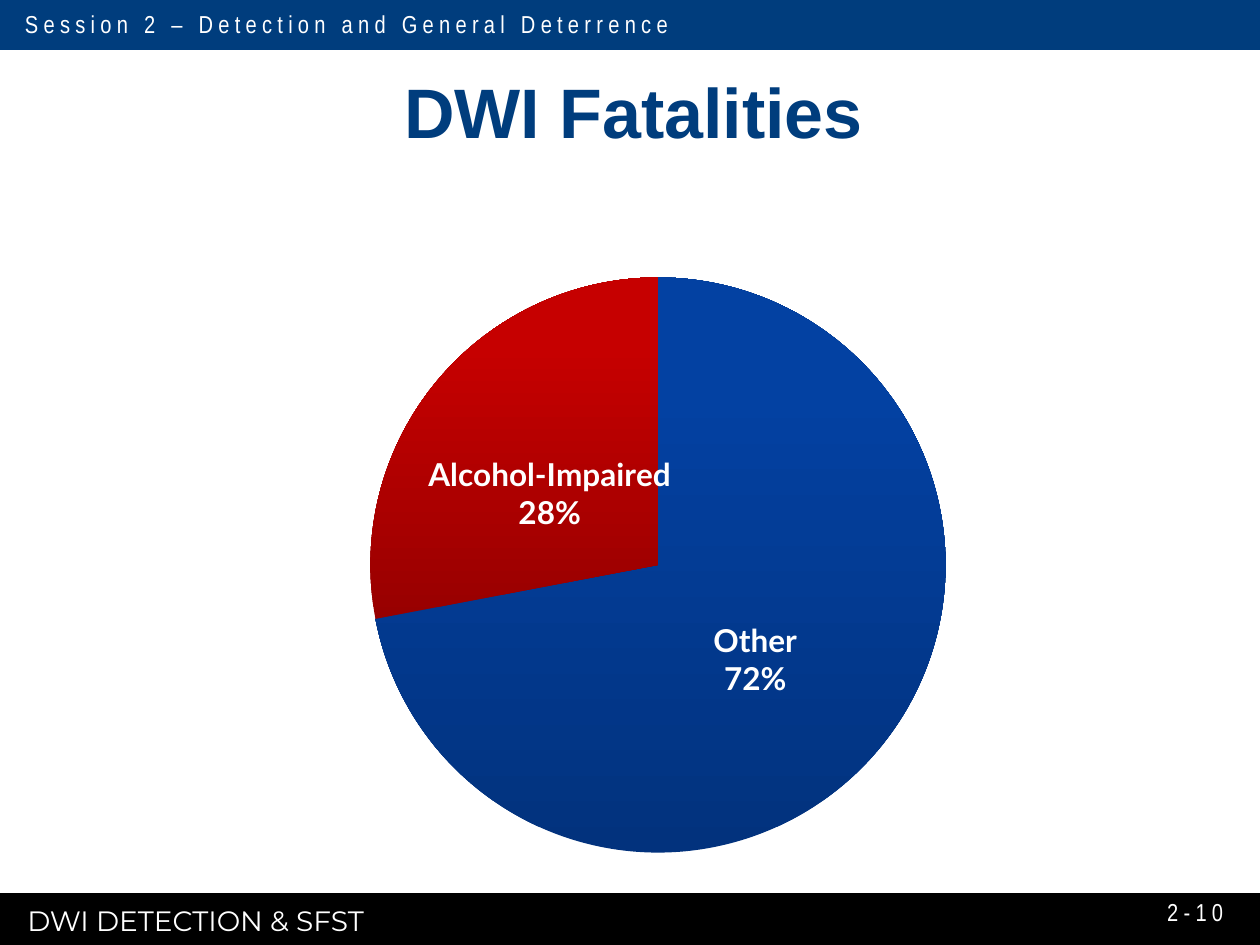
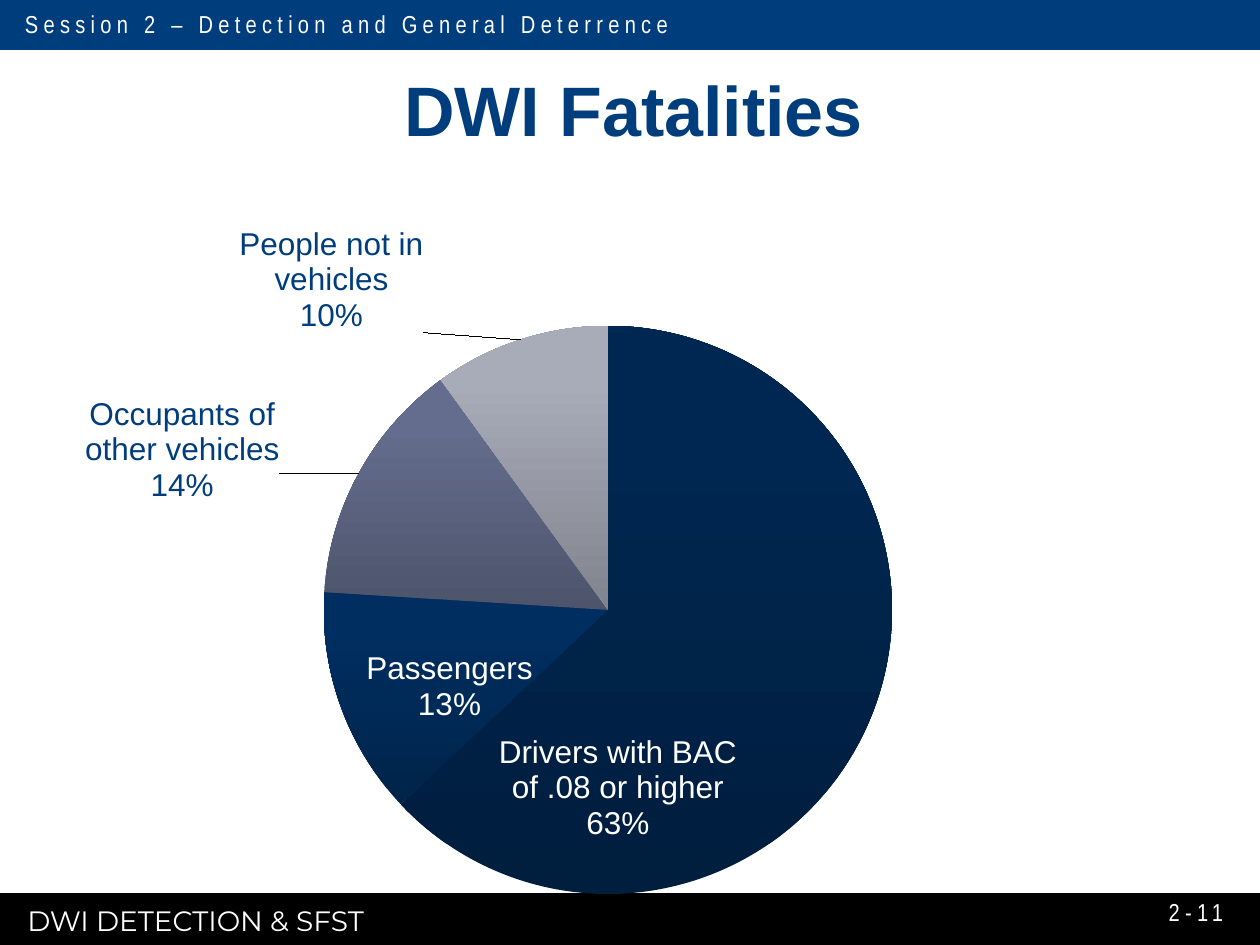
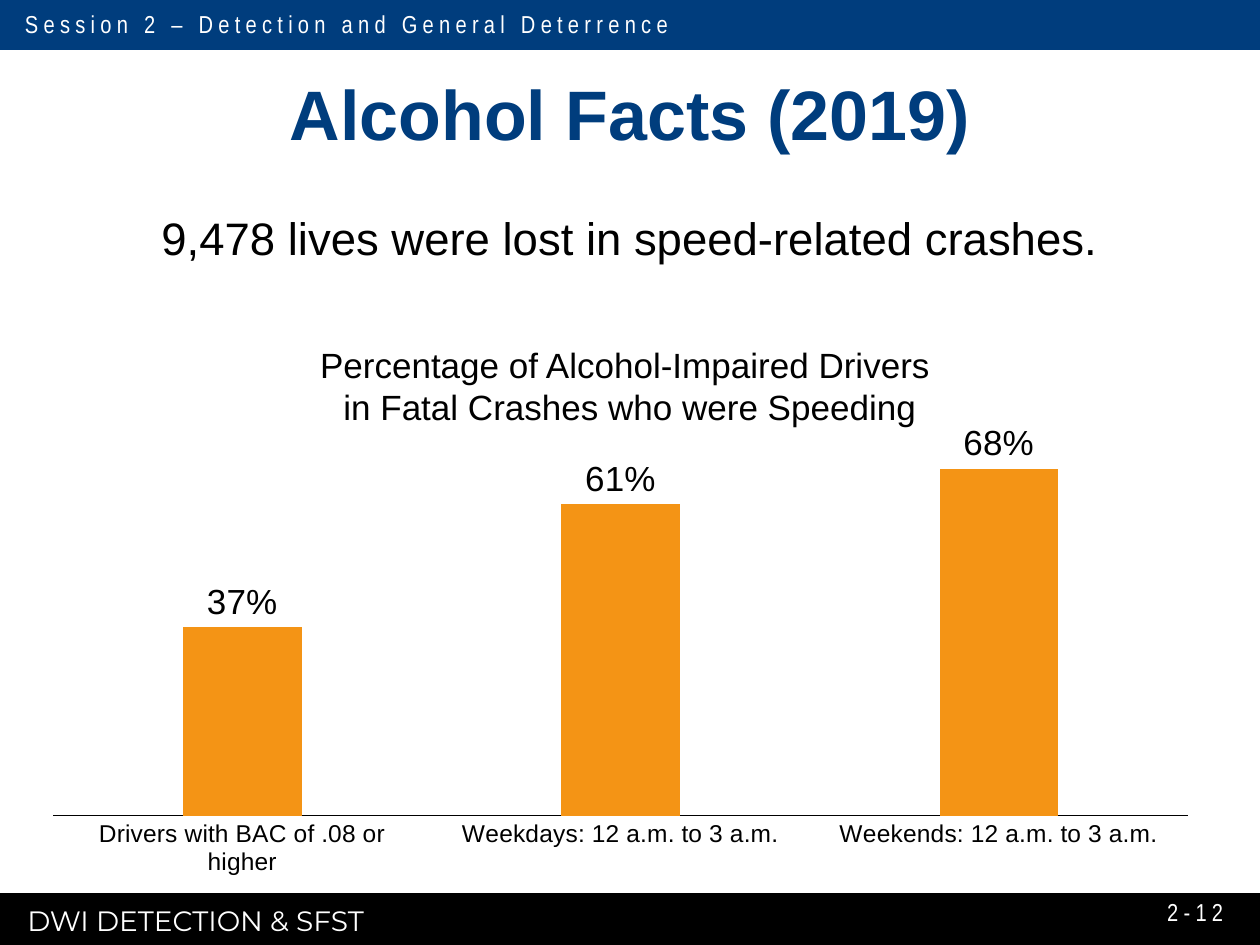
"""Build three slides on DWI fatalities and alcohol-related crash facts."""
from pptx import Presentation
from pptx.chart.data import CategoryChartData
from pptx.dml.color import RGBColor
from pptx.enum.chart import XL_CHART_TYPE as CT, XL_LABEL_POSITION as LP, XL_TICK_MARK as TM
from pptx.enum.shapes import MSO_SHAPE as SHAPE
from pptx.enum.text import MSO_ANCHOR as ANCHOR, PP_ALIGN as ALIGN
from pptx.oxml import parse_xml
from pptx.oxml.ns import nsdecls
from pptx.util import Pt

NAVY = RGBColor(0x00, 0x3D, 0x7D)
BLACK = RGBColor(0x00, 0x00, 0x00)
WHITE = RGBColor(0xFF, 0xFF, 0xFF)
ORANGE = RGBColor(0xF4, 0x94, 0x15)

HEADER = dict(name="Arial Narrow", size=Pt(14), color=WHITE)
FOOTER = dict(name="Montserrat", size=Pt(16), color=WHITE)
TITLE = dict(name="Arial", size=Pt(40), bold=True, color=NAVY)
BODY = dict(name="Arial", size=Pt(26), color=BLACK)
CAPTION = dict(name="Arial", size=Pt(20), color=BLACK)
AXIS = dict(name="Arial", size=Pt(14), color=BLACK)

LABEL_XML = """<c:dLbl %s><c:idx val="%d"/>
<c:layout><c:manualLayout><c:x val="%s"/><c:y val="%s"/></c:manualLayout></c:layout>
<c:showLegendKey val="0"/><c:showVal val="0"/><c:showCatName val="1"/><c:showSerName val="0"/>
<c:showPercent val="1"/><c:showBubbleSize val="0"/><c:separator>\n</c:separator>
<c:extLst><c:ext uri="{CE6537A1-D6FC-4f65-9D91-7224C49458BB}"
xmlns:c15="http://schemas.microsoft.com/office/drawing/2012/chart">
<c15:layout><c:manualLayout><c:w val="%s"/><c:h val="%s"/></c:manualLayout></c15:layout>
</c:ext></c:extLst></c:dLbl>"""
PLOT_XML = """<c:layout %s><c:manualLayout><c:layoutTarget val="inner"/>
<c:xMode val="edge"/><c:yMode val="edge"/><c:x val="%s"/><c:y val="%s"/>
<c:w val="%s"/><c:h val="%s"/></c:manualLayout></c:layout>"""


def style(font, values):
    for key, value in values.items():
        if key == "color":
            font.color.rgb = value
        else:
            setattr(font, key, value)


def add_text(s, box, lines, values, align=ALIGN.LEFT, anchor=ANCHOR.MIDDLE, inset=None, spacing=0):
    tf = s.shapes.add_textbox(*map(Pt, box)).text_frame
    tf.word_wrap = True
    tf.vertical_anchor = anchor
    if inset is not None:
        tf.margin_left = tf.margin_right = tf.margin_top = tf.margin_bottom = Pt(inset)
    for i, line in enumerate(lines):
        p = tf.add_paragraph() if i else tf.paragraphs[0]
        p.alignment = align
        r = p.add_run()
        r.text = line
        style(r.font, values)
        if spacing:
            r._r.get_or_add_rPr().set("spc", str(spacing))


prs = Presentation()
prs.slide_width, prs.slide_height = Pt(720), Pt(540)

slides = []
titles = [
    ("DWI Fatalities", (38, 37.1, 648, 52.6)),
    ("DWI Fatalities", (38, 32.2, 648, 59.8)),
    ("Alcohol Facts (2019)", (24, 34.3, 672, 59.8)),
]
for number, (title, box) in enumerate(titles, 10):
    s = prs.slides.add_slide(prs.slide_layouts[5])
    slides.append(s)
    for top, height, color in ((511.2, 28.8, BLACK), (0, 27.6, NAVY)):
        sp = s.shapes.add_shape(SHAPE.RECTANGLE, 0, Pt(top), Pt(720), Pt(height))
        sp.shadow.inherit = False
        sp.fill.solid()
        sp.fill.fore_color.rgb = sp.line.color.rgb = color
        sp.line.width = Pt(2)
    add_text(s, (7.2, 1.3, 620, 24.2), ["Session 2 – Detection and General Deterrence"], HEADER, spacing=300)
    add_text(s, (8.6, 512.8, 501, 26.6), ["DWI DETECTION & SFST"], FOOTER)
    add_text(s, (538.3, 506.4, 167.8, 28.8), [f"2-{number}"], HEADER, ALIGN.RIGHT, spacing=300)

    sp = s.shapes.title
    sp.left, sp.top, sp.width, sp.height = map(Pt, box)
    tf = sp.text_frame
    tf.text = title
    tf.vertical_anchor = ANCHOR.MIDDLE
    tf.margin_left = tf.margin_right = tf.margin_top = tf.margin_bottom = 0
    tf.paragraphs[0].alignment = ALIGN.CENTER
    style(tf.paragraphs[0].runs[0].font, TITLE)

pies = [
    dict(
        box=(8.6, 112.3, 711.4, 398.9), plot=(0.285, 0.116, 0.463, 0.824),
        font=dict(name="Lato", size=Pt(18), bold=True),
        slices=[
            ("Other", 72, "02327D", "0341A2", WHITE, (-0.138, -0.189, 0.12, 0.13)),
            ("Alcohol-Impaired", 28, "980000", "C60000", WHITE, (0.193, 0.221, 0.12, 0.18)),
        ],
    ),
    dict(
        box=(0, 115.9, 720, 413.3), plot=(0.257, 0.17, 0.451, 0.786),
        font=dict(name="Arial", size=Pt(18), bold=False),
        slices=[
            ("Drivers with BAC of .08 or higher", 63, "001E3E", "002751", WHITE, (-0.299, 0.012, 0.21, 0.16)),
            ("Passengers", 13, "00244A", "002E60", WHITE, (0.158, -0.08, 0.17, 0.12)),
            ("Occupants of other vehicles", 14, "4D546C", "646D8D", NAVY, (-0.058, 0.046, 0.17, 0.16)),
            ("People not in vehicles", 10, "81838E", "A8ABB8", NAVY, (-0.075, 0, 0.17, 0.16)),
        ],
    ),
]
for s, pie in zip(slides, pies):
    data = CategoryChartData()
    data.categories = [row[0] for row in pie["slices"]]
    data.add_series("Series 1", [row[1] for row in pie["slices"]])
    chart = s.shapes.add_chart(CT.PIE, *map(Pt, pie["box"]), data).chart
    chart.has_title = chart.has_legend = False
    style(chart.font, dict(pie["font"], color=NAVY))
    plot_area = chart._chartSpace.chart.plotArea
    for old in plot_area.xpath("c:layout"):
        plot_area.remove(old)
    plot_area.insert(0, parse_xml(PLOT_XML % (nsdecls("c"), *pie["plot"])))
    ser = chart.plots[0].series[0]
    labels = ser.data_labels
    labels.show_value = False
    labels.show_category_name = labels.show_percentage = True
    style(labels.font, dict(pie["font"], color=NAVY))
    for i, (_, _, dark, light, color, place) in enumerate(pie["slices"]):
        labels._element.insert(i, parse_xml(LABEL_XML % (nsdecls("c"), i, *place)))
        point = ser.points[i]
        style(point.data_label.font, dict(pie["font"], color=color))
        fill = point.format.fill
        fill.gradient()
        fill.gradient_angle = 90
        for stop, position, shade in zip(fill.gradient_stops, (0, 0.8), (dark, light)):
            stop.position = position
            stop.color.rgb = RGBColor.from_string(shade)

s = slides[2]
add_text(s, (0, 120, 720, 41), ["9,478 lives were lost in speed-related crashes."],
         BODY, ALIGN.CENTER, ANCHOR.TOP, 0)
data = CategoryChartData(number_format="0%")
data.categories = ["Drivers with BAC of .08 or higher", "Weekdays: 12 a.m. to 3 a.m.",
                   "Weekends: 12 a.m. to 3 a.m."]
data.add_series("Series 1", (0.37, 0.61, 0.68))
chart = s.shapes.add_chart(CT.COLUMN_CLUSTERED, Pt(23.8), Pt(217.4), Pt(662.4), Pt(283), data).chart
chart.has_title = chart.has_legend = False
style(chart.font, AXIS)
plot_area = chart._chartSpace.chart.plotArea
for old in plot_area.xpath("c:layout"):
    plot_area.remove(old)
plot_area.insert(0, parse_xml(PLOT_XML % (nsdecls("c"), 0.01, 0.055, 0.979, 0.828)))
axis = chart.value_axis
axis.minimum_scale, axis.maximum_scale = 0, 0.8
axis.has_major_gridlines = axis.visible = False
axis = chart.category_axis
axis.major_tick_mark = TM.NONE
axis.format.line.color.rgb = BLACK
axis.format.line.width = Pt(0.75)
style(axis.tick_labels.font, AXIS)
plot = chart.plots[0]
plot.gap_width, plot.overlap = 219, -27
plot.vary_by_categories = False
ser = plot.series[0]
ser.format.fill.solid()
ser.format.fill.fore_color.rgb = ORANGE
labels = ser.data_labels
labels.show_value = True
labels.position = LP.OUTSIDE_END
labels.number_format, labels.number_format_is_linked = "0%", False
style(labels.font, CAPTION)
add_text(s, (0, 196.5, 720, 50), ["Percentage of Alcohol-Impaired Drivers ", "in Fatal Crashes who were Speeding"],
         CAPTION, ALIGN.CENTER, ANCHOR.TOP, 0)

prs.save("out.pptx")
